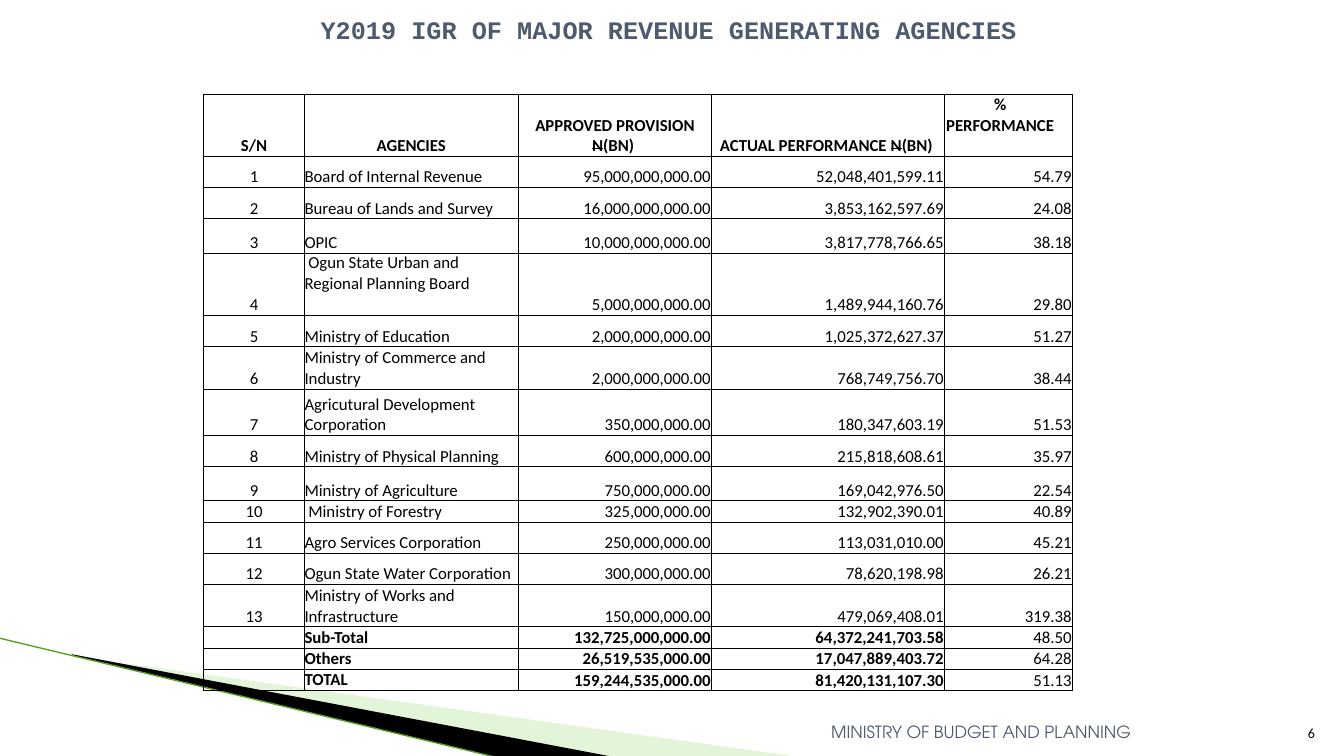
import pptx
import pptx.util
import pptx.dml.color
import pptx.enum.text
import pptx.enum.shapes
import pptx.oxml
import pptx.oxml.ns
import lxml.etree

Inches = pptx.util.Inches
Pt = pptx.util.Pt
RGBColor = pptx.dml.color.RGBColor
Align = pptx.enum.text.PP_ALIGN
Anchor = pptx.enum.text.MSO_ANCHOR
qn = pptx.oxml.ns.qn

BLACK = RGBColor(0x00, 0x00, 0x00)
SLATE = RGBColor(0x4E, 0x5B, 0x6F)
PALE_GREEN = RGBColor(0xB8, 0xE7, 0xA1)
GREEN = RGBColor(0x54, 0xA0, 0x21)

TITLE = "Y2019 IGR OF MAJOR REVENUE GENERATING AGENCIES"
FOOTER = "MINISTRY OF BUDGET AND PLANNING"
PAGE_NUMBER = "6"
HEADERS = [
    ["S/N"],
    ["AGENCIES"],
    ["APPROVED PROVISION ", "N", "(BN) "],
    ["ACTUAL PERFORMANCE ", "N", "(BN) "],
    ["%\vPERFORMANCE"],
]
AGENCIES = [
    ("Board of Internal Revenue", "95,000,000,000.00", "52,048,401,599.11", "54.79"),
    ("Bureau of Lands and Survey", "16,000,000,000.00", "3,853,162,597.69", "24.08"),
    ("OPIC", "10,000,000,000.00", "3,817,778,766.65", "38.18"),
    (" Ogun State Urban and Regional Planning Board", "5,000,000,000.00", "1,489,944,160.76", "29.80"),
    ("Ministry of Education", "2,000,000,000.00", "1,025,372,627.37", "51.27"),
    ("Ministry of Commerce and Industry", "2,000,000,000.00", "768,749,756.70", "38.44"),
    ("Agricutural Development Corporation", "350,000,000.00", "180,347,603.19", "51.53"),
    ("Ministry of Physical Planning", "600,000,000.00", "215,818,608.61", "35.97"),
    ("Ministry of Agriculture", "750,000,000.00", "169,042,976.50", "22.54"),
    (" Ministry of Forestry", "325,000,000.00", "132,902,390.01", "40.89"),
    ("Agro Services Corporation", "250,000,000.00", "113,031,010.00", "45.21"),
    ("Ogun State Water Corporation", "300,000,000.00", "78,620,198.98", "26.21"),
    ("Ministry of Works and Infrastructure", "150,000,000.00", "479,069,408.01", "319.38"),
]
TOTALS = [
    ("Sub-Total", "132,725,000,000.00", "64,372,241,703.58", "48.50"),
    ("Others", "26,519,535,000.00", "17,047,889,403.72", "64.28"),
    ("TOTAL", "159,244,535,000.00", "81,420,131,107.30", "51.13"),
]
COLUMN_WIDTHS = [1, 2.12, 1.92, 2.31, 1.27]
ROW_HEIGHTS = [0.61, 0.31, 0.31, 0.34, 0.62, 0.31, 0.42, 0.46, 0.31,
               0.34, 0.21, 0.31, 0.31, 0.42, 0.21, 0.21, 0.21]
COLUMN_ALIGNS = [Align.CENTER, Align.LEFT, Align.RIGHT, Align.RIGHT, Align.RIGHT]
TOP_ANCHORED = {(0, 4), (4, 1)}
WEDGES = [
    ((1.04, 5.47, 5.54, 1.58),
     [(0.73, 6.51), (7.93, 7.51), (6.08, 7.51), (0.73, 6.5)], PALE_GREEN, 40),
    ((-0.08, 6.33, 5.54, 0.92),
     [(0.71, 6.49), (6.09, 7.51), (4.96, 7.52), (0.72, 6.5)], BLACK, 100),
]


def style(para, align, size, font, color, bold=False):
    para.alignment = align
    para.font.size = Pt(size)
    para.font.name = font
    para.font.color.rgb = color
    para.font.bold = bold


def add_label(page, place, text, anchor, *look):
    box = page.shapes.add_textbox(*map(Inches, place))
    box.text_frame.word_wrap = True
    box.text_frame.vertical_anchor = anchor
    para = box.text_frame.paragraphs[0]
    para.add_run().text = text
    style(para, *look)


def add_wedge(page, frame, points, color, opacity):
    left, top, width, height = map(Inches, frame)
    corners = [(Inches(x), Inches(y)) for x, y in points]
    builder = page.shapes.build_freeform(*corners[0], scale=1.0)
    builder.add_line_segments(corners[1:])
    wedge = builder.convert_to_shape()
    wedge.left, wedge.top, wedge.width, wedge.height = left, top, width, height
    outline = wedge._element.spPr.find(".//" + qn("a:path"))
    outline.set("w", str(width))
    outline.set("h", str(height))
    for point, (x, y) in zip(outline.iter(qn("a:pt")), corners):
        point.set("x", str(x - left))
        point.set("y", str(y - top))
    wedge.shadow.inherit = False
    wedge.fill.solid()
    wedge.fill.fore_color.rgb = color
    wedge.line.fill.background()
    if opacity < 100:
        tint = wedge._element.spPr.find(".//" + qn("a:srgbClr"))
        lxml.etree.SubElement(tint, qn("a:alpha"), val=str(opacity * 1000))


def add_borders(cell):
    properties = cell._tc.get_or_add_tcPr()
    for index, side in enumerate(("lnL", "lnR", "lnT", "lnB")):
        border = pptx.oxml.parse_xml(
            f'<a:{side} {pptx.oxml.ns.nsdecls("a")} w="6350"><a:solidFill>'
            f'<a:srgbClr val="{BLACK}"/></a:solidFill></a:{side}>')
        properties.insert(index, border)


def fill_cell(cell, row, column, pieces):
    inset = Inches(0.01 if row and column > 1 else 0)
    cell.margin_left = cell.margin_right = cell.margin_top = inset
    cell.margin_bottom = 0
    if (row, column) == (0, 4):
        cell.margin_right = Inches(0.17)
    cell.vertical_anchor = Anchor.TOP if (row, column) in TOP_ANCHORED else Anchor.BOTTOM
    cell.fill.background()
    add_borders(cell)
    if len(pieces) == 1:
        cell.text = pieces[0]
    para = cell.text_frame.paragraphs[0]
    if len(pieces) > 1:
        for piece in pieces:
            span = para.add_run()
            span.text = piece
            if piece == "N":
                span.font._element.set("strike", "sngStrike")
    align = COLUMN_ALIGNS[column] if row else Align.CENTER
    bold = row == 0 or (row > len(AGENCIES) and column < 4)
    style(para, align, 12, "Calibri", BLACK, bold)
    if pieces == [""]:
        lxml.etree.SubElement(para._p, qn("a:endParaRPr"), sz="1200")


def add_revenue_table(page):
    rows = [HEADERS]
    rows += [[[str(number)]] + [[text] for text in agency]
             for number, agency in enumerate(AGENCIES, 1)]
    rows += [[[""]] + [[text] for text in total] for total in TOTALS]
    table = page.shapes.add_table(
        len(rows), len(COLUMN_WIDTHS), Inches(2.02), Inches(0.94),
        Inches(sum(COLUMN_WIDTHS)), Inches(sum(ROW_HEIGHTS))).table
    table.first_row = False
    table.horz_banding = False
    for column, width in zip(table.columns, COLUMN_WIDTHS):
        column.width = Inches(width)
    for line, height in zip(table.rows, ROW_HEIGHTS):
        line.height = Inches(height)
    for row, entries in enumerate(rows):
        for column, pieces in enumerate(entries):
            fill_cell(table.cell(row, column), row, column, pieces)


def main():
    deck = pptx.Presentation()
    deck.slide_width = Inches(13.33)
    deck.slide_height = Inches(7.5)
    page = deck.slides.add_slide(deck.slide_layouts[6])
    for wedge in WEDGES:
        add_wedge(page, *wedge)
    edge = page.shapes.add_connector(
        pptx.enum.shapes.MSO_CONNECTOR.STRAIGHT,
        Inches(-0.01), Inches(6.33), Inches(4.95), Inches(7.52))
    edge.line.color.rgb = GREEN
    edge.line.width = Pt(0.95)
    lxml.etree.SubElement(edge._element.spPr, qn("a:effectLst"))
    add_label(page, (2.13, 0.1, 9, 0.38), TITLE, Anchor.MIDDLE,
              Align.CENTER, 18, "Courier New", SLATE, True)
    add_label(page, (12.61, 7, 0.53, 0.4), PAGE_NUMBER, Anchor.BOTTOM,
              Align.RIGHT, 10, "Calibri", BLACK)
    add_label(page, (7.33, 7.11, 3.99, 0.39), FOOTER, Anchor.TOP,
              Align.RIGHT, 12, "TeX Gyre Adventor", SLATE)
    add_revenue_table(page)
    deck.save("out.pptx")


if __name__ == "__main__":
    main()
